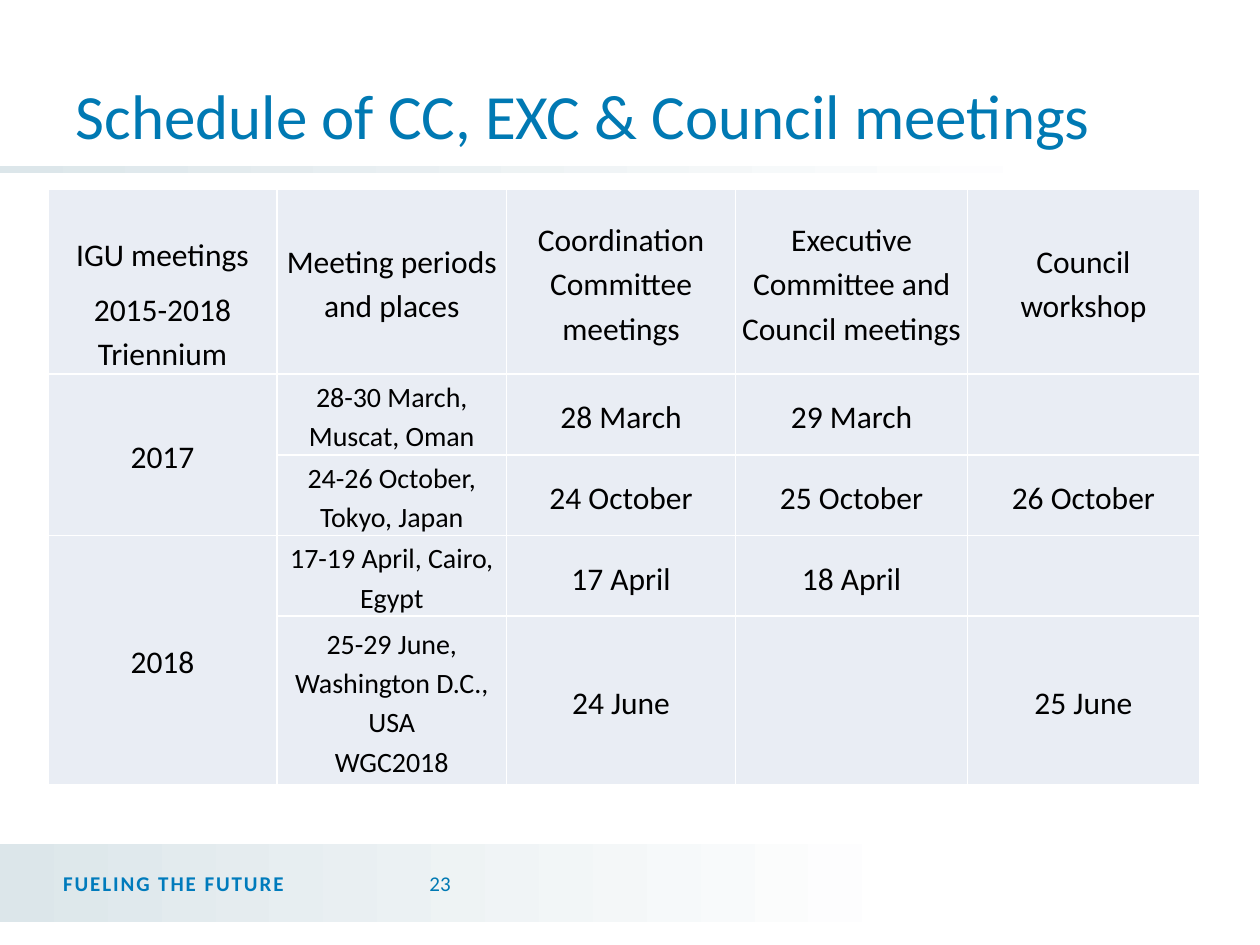
from lxml import etree
from pptx import Presentation
from pptx import util as u
from pptx.dml.color import RGBColor
from pptx.enum import shapes, text
from pptx.oxml.ns import qn

TITLE = "Schedule of CC, EXC & Council meetings"
COLUMN_WIDTHS = [1.82, 1.82, 1.82, 1.84, 1.84]
ROW_HEIGHTS = [1.47, 0.64, 0.64, 0.64, 1.34]
MEETINGS = [
    ["IGU meetings\n2015-2018 Triennium", "Meeting periods and places",
     "Coordination Committee meetings", "Executive Committee and Council meetings",
     "Council workshop"],
    ["2017", "28-30 March, Muscat, Oman", "28 March", "29 March", ""],
    ["", "24-26 October, Tokyo, Japan", "24 October", "25 October", "26 October"],
    ["2018", "17-19 April, Cairo, Egypt", "17 April", "18 April", ""],
    ["", "25-29 June, Washington D.C., USA\vWGC2018", "24 June", "", "25 June"],
]
YEAR_ROWS = [1, 3]


def color(value):
    return RGBColor.from_string(value)


def write_text(frame, content, size=18, fill="000000", bold=False, align=None,
               line_spacing=None, space_after=None, tracking=None, font="Calibri"):
    for index, line in enumerate(content.split("\n")):
        paragraph = frame.add_paragraph() if index else frame.paragraphs[0]
        paragraph.text = line
        paragraph.alignment = align
        paragraph.line_spacing = line_spacing
        if space_after is not None:
            paragraph.space_after = u.Pt(space_after)
        for run in paragraph.runs:
            run.font.name = font
            run.font.size = u.Pt(size)
            run.font.bold = bold
            run.font.color.rgb = color(fill)
            if tracking:
                run.font._element.set("spc", str(round(tracking * 100)))


def set_insets(target, left, top, right, bottom):
    target.margin_left, target.margin_top = u.Inches(left), u.Inches(top)
    target.margin_right, target.margin_bottom = u.Inches(right), u.Inches(bottom)


def set_borders(cell, fill, width):
    properties = cell._tc.get_or_add_tcPr()
    for side in ("lnL", "lnR", "lnT", "lnB"):
        line = etree.SubElement(properties, qn(f"a:{side}"), w=str(u.Pt(width)))
        solid = etree.SubElement(line, qn("a:solidFill"))
        etree.SubElement(solid, qn("a:srgbClr"), val=fill)


class SlideBuilder:
    accent = "0079B3"
    slogan_color = "007BBC"
    band_start = "DCE6EA"
    white = "FFFFFF"
    cell_fill = "E9EDF4"

    def __init__(self, presentation):
        self.slide = presentation.slides.add_slide(presentation.slide_layouts[5])
        self.slide.background.fill.solid()
        self.slide.background.fill.fore_color.rgb = color(self.white)

    def band(self, left, top, width, height, fade_end):
        shape = self.slide.shapes.add_shape(
            shapes.MSO_SHAPE.RECTANGLE, *map(u.Inches, (left, top, width, height)))
        shape.shadow.inherit = False
        shape.line.fill.background()
        shape.fill.gradient()
        shape.fill.gradient_angle = 0
        stops = zip(shape.fill.gradient_stops, (self.band_start, self.white), (0, fade_end))
        for stop, value, position in stops:
            stop.color.rgb = color(value)
            stop.position = position

    def title(self, content, left, top, width, height):
        title = self.slide.shapes.title
        title.left, title.top = u.Inches(left), u.Inches(top)
        title.width, title.height = u.Inches(width), u.Inches(height)
        title.text_frame.vertical_anchor = text.MSO_ANCHOR.BOTTOM
        write_text(title.text_frame, content, size=36, fill=self.accent,
                   align=text.PP_ALIGN.LEFT)

    def label(self, content, left, top, width, height, inset=0.1, **style):
        box = self.slide.shapes.add_textbox(*map(u.Inches, (left, top, width, height)))
        frame = box.text_frame
        frame.word_wrap = True
        frame.vertical_anchor = text.MSO_ANCHOR.MIDDLE
        set_insets(frame, inset, 0.05, 0.1, 0.05)
        write_text(frame, content, size=12, **style)

    def table(self, rows, left, top, widths, heights):
        table = self.slide.shapes.add_table(
            len(rows), len(widths),
            *map(u.Inches, (left, top, sum(widths), sum(heights)))).table
        table.first_row = table.horz_banding = False
        for column, width in zip(table.columns, widths):
            column.width = u.Inches(width)
        for row, height in zip(table.rows, heights):
            row.height = u.Inches(height)
        for row_index, row in enumerate(rows):
            for column_index, content in enumerate(row):
                self.cell(table.cell(row_index, column_index), content,
                          size=16 if row_index and column_index == 1 else 18)
        return table

    def cell(self, cell, content, size):
        set_borders(cell, self.white, 1)
        cell.fill.solid()
        cell.fill.fore_color.rgb = color(self.cell_fill)
        cell.vertical_anchor = text.MSO_ANCHOR.MIDDLE
        set_insets(cell, 0.05, 0.01, 0.05, 0)
        write_text(cell.text_frame, content, size=size, align=text.PP_ALIGN.CENTER,
                   line_spacing=1.15, space_after=6)


def main():
    presentation = Presentation()
    presentation.slide_width, presentation.slide_height = u.Inches(10), u.Inches(7.5)
    builder = SlideBuilder(presentation)
    builder.band(0, 6.7, 7.42, 0.62, fade_end=0.98)
    builder.band(0, 1.32, 9.5, 0.05, fade_end=0.89)
    builder.label("FUELING THE FUTURE", 0.5, 6.81, 2.81, 0.4, inset=0,
                  fill=builder.slogan_color, bold=True, tracking=1.1)
    builder.label("23", 3.31, 6.81, 0.8, 0.4, fill=builder.accent)
    builder.title(TITLE, 0.5, 0.01, 9, 1.25)
    table = builder.table(MEETINGS, 0.38, 1.5, COLUMN_WIDTHS, ROW_HEIGHTS)
    table.cell(0, 0).vertical_anchor = text.MSO_ANCHOR.BOTTOM
    for row in YEAR_ROWS:
        year = table.cell(row, 0)
        year.merge(table.cell(row + 1, 0))
        set_insets(year, 0, 0, 0, 0)
    presentation.save("out.pptx")


if __name__ == "__main__":
    main()
